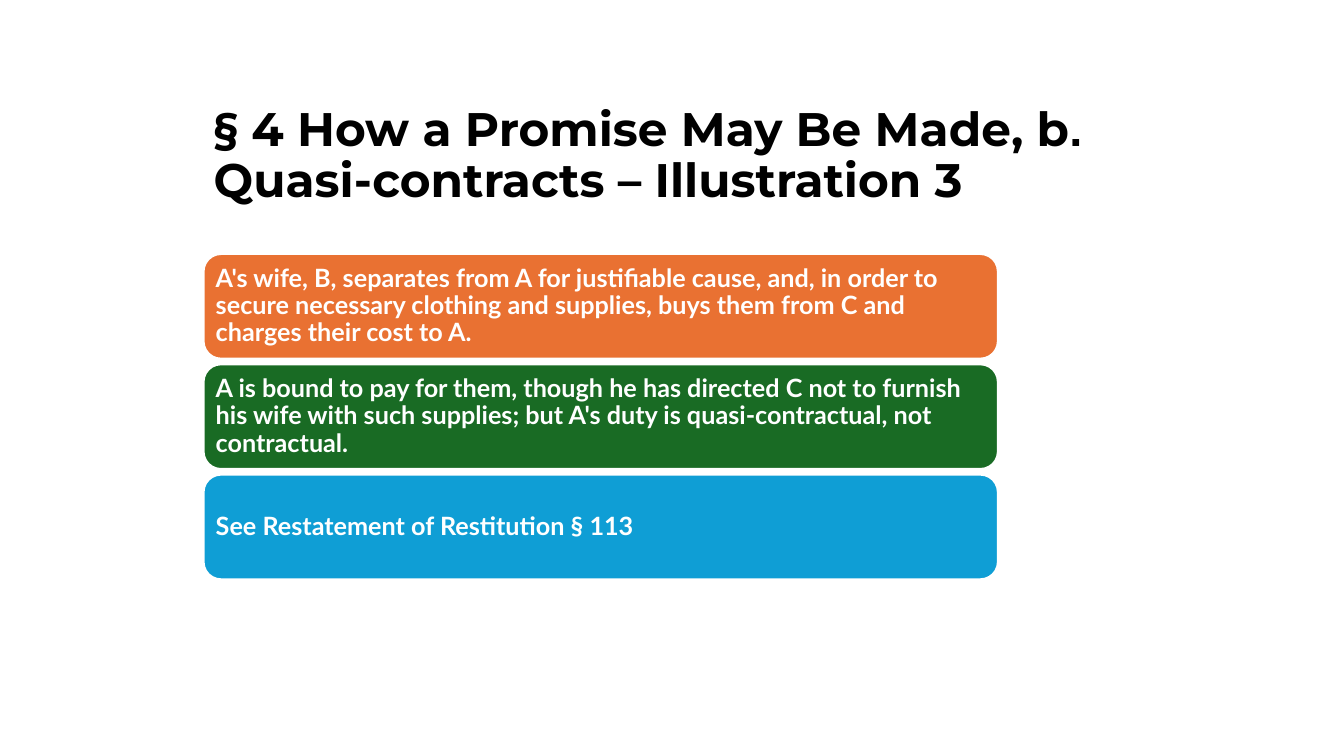
import pptx
import pptx.util
import pptx.dml.color
import pptx.enum.shapes
import pptx.enum.text

Cm, Pt = pptx.util.Cm, pptx.util.Pt
RGBColor = pptx.dml.color.RGBColor
ALIGN = pptx.enum.text.PP_ALIGN
ANCHOR = pptx.enum.text.MSO_ANCHOR
AUTO_SIZE = pptx.enum.text.MSO_AUTO_SIZE

BLACK = RGBColor(0x00, 0x00, 0x00)
WHITE = RGBColor(0xFF, 0xFF, 0xFF)
ORANGE = RGBColor(0xE9, 0x71, 0x32)
GREEN = RGBColor(0x19, 0x6B, 0x24)
BLUE = RGBColor(0x0F, 0x9E, 0xD5)

LEFT = 5.13
CARD_TOP, CARD_WIDTH, CARD_HEIGHT, CARD_PITCH = 6.4, 20.02, 2.64, 2.78

TITLE = [
    ("§ 4 How a Promise May Be Made, b", "Montserrat"),
    (".", "Arial"),
    (" Quasi-contracts – Illustration 3", "Montserrat"),
]
CARDS = [
    ("A's wife, B, separates from A for justifiable cause, and, in order to secure "
     "necessary clothing and supplies, buys them from C and charges their cost to A.", ORANGE),
    ("A is bound to pay for them, though he has directed C not to furnish his wife "
     "with such supplies; but A's duty is quasi-contractual, not contractual.", GREEN),
    ("See Restatement of Restitution § 113", BLUE),
]


def apply(target, values):
    for name, value in values.items():
        setattr(target, name, value)


class Deck:
    """Holds the text style and the current slide."""

    title_font = {"size": Pt(33.6), "bold": True}
    card_font = {"size": Pt(18), "bold": True}
    paragraph = {"alignment": ALIGN.LEFT, "line_spacing": 0.9}
    frame = {"word_wrap": True, "auto_size": AUTO_SIZE.NONE, "vertical_anchor": ANCHOR.MIDDLE}
    sides = ("margin_left", "margin_top", "margin_right", "margin_bottom")

    def __init__(self, s):
        self.s = s

    def add_text(self, tf, runs, font, color):
        apply(tf, self.frame)
        p = tf.paragraphs[0]
        apply(p, self.paragraph)
        for text, name in runs:
            r = p.add_run()
            r.text = text
            apply(r.font, {**font, "name": name})
            r.font.color.rgb = color

    def title(self, runs, left, top, width, height):
        sp = self.s.shapes.title
        apply(sp, {"left": Cm(left), "top": Cm(top), "width": Cm(width), "height": Cm(height)})
        self.add_text(sp.text_frame, runs, self.title_font, BLACK)

    def card(self, text, fill, left, top, width, height):
        sp = self.s.shapes.add_shape(pptx.enum.shapes.MSO_SHAPE.ROUNDED_RECTANGLE,
                                     Cm(left), Cm(top), Cm(width), Cm(height))
        sp.shadow.inherit = False
        sp.fill.solid()
        sp.fill.fore_color.rgb = fill
        sp.line.color.rgb = WHITE
        sp.line.width = Pt(1.5)
        apply(sp.text_frame, dict.fromkeys(self.sides, Cm(0.18)))
        self.add_text(sp.text_frame, [(text, "Lato")], self.card_font, WHITE)


def main():
    prs = pptx.Presentation()
    prs.slide_width, prs.slide_height = Cm(33.87), Cm(19.05)
    deck = Deck(prs.slides.add_slide(prs.slide_layouts.get_by_name("Title Only")))

    # Heading
    deck.title(TITLE, LEFT, 1.9, 24, 4.11)

    # Stacked cards
    for i, (text, fill) in enumerate(CARDS):
        deck.card(text, fill, LEFT, CARD_TOP + i * CARD_PITCH, CARD_WIDTH, CARD_HEIGHT)

    prs.save("out.pptx")


if __name__ == "__main__":
    main()
